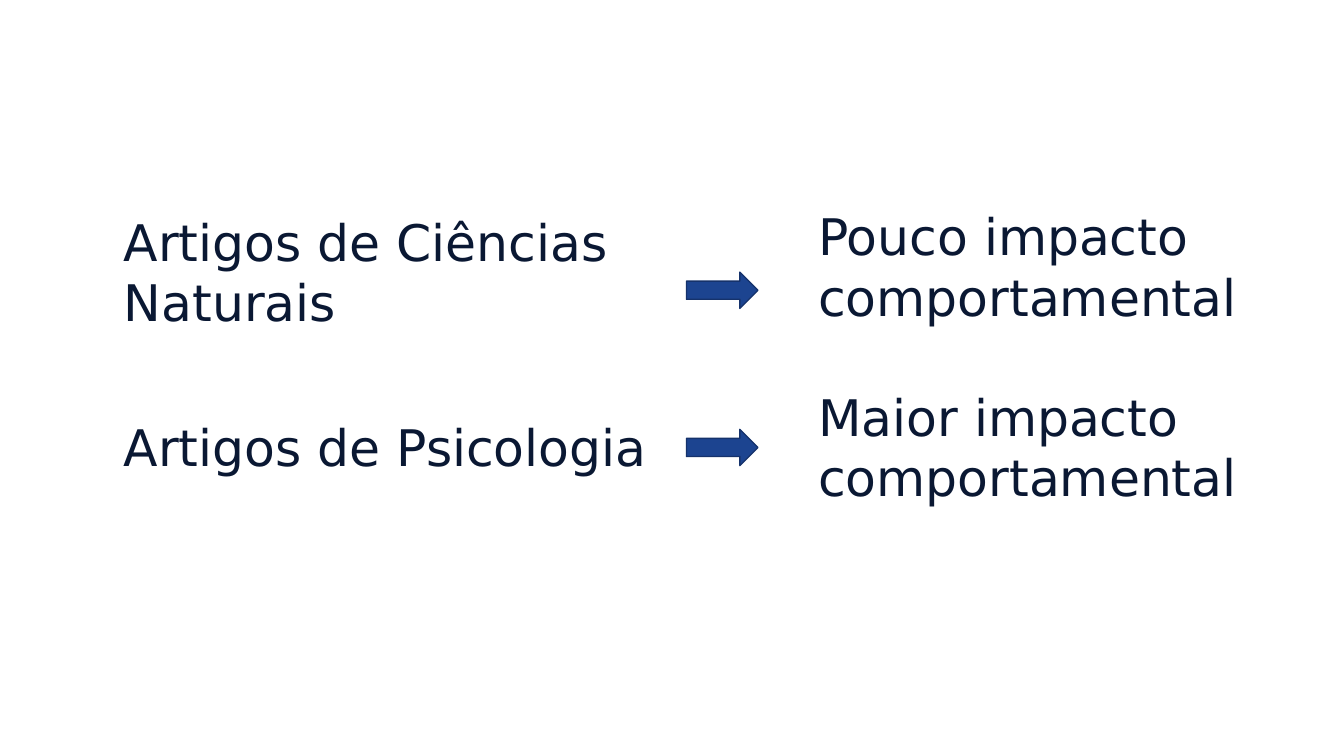
from dataclasses import dataclass

from pptx import Presentation
from pptx.dml.color import RGBColor
from pptx.enum.shapes import MSO_SHAPE
from pptx.enum.text import MSO_AUTO_SIZE
from pptx.slide import Slide
from pptx.util import Inches, Length, Pt

ARROW = MSO_SHAPE.RIGHT_ARROW
GROW = MSO_AUTO_SIZE.SHAPE_TO_FIT_TEXT


@dataclass(frozen=True)
class Theme:
    font: str = "DejaVu Sans"
    size: Length = Pt(36)
    edge: Length = Pt(1)
    ink: RGBColor = RGBColor(0x0A, 0x18, 0x33)
    fill: RGBColor = RGBColor(0x1C, 0x44, 0x90)
    line: RGBColor = RGBColor(0x15, 0x32, 0x6B)


@dataclass(frozen=True)
class Span:
    col: float
    wide: float


@dataclass(frozen=True)
class Label:
    text: str
    row: float
    tall: float


@dataclass(frozen=True)
class Link:
    cause: Label
    effect: Label
    row: float


THEME = Theme()
WIDE, HIGH = 133.33, 75
CAUSE = Span(11.3, 58.9)
MIDDLE = Span(68.1, 7.1)
EFFECT = Span(80.2, 45.4)
ONE, TWO = 7.1, 13.1
TALL = 3.6

LINKS = (
    Link(
        Label("Artigos de Ciências Naturais", 20.4, TWO),
        Label("Pouco impacto comportamental", 19.9, TWO),
        27,
    ),
    Link(
        Label("Artigos de Psicologia", 40.8, ONE),
        Label("Maior impacto comportamental", 37.8, TWO),
        42.6,
    ),
)


def grid(cells: float) -> Length:
    return Inches(cells / 10)


def area(span: Span, row: float, tall: float) -> tuple[Length, ...]:
    return grid(span.col), grid(row), grid(span.wide), grid(tall)


def write(slide: Slide, span: Span, label: Label) -> None:
    box = slide.shapes.add_textbox(*area(span, label.row, label.tall))
    frame = box.text_frame
    frame.word_wrap = True
    frame.auto_size = GROW
    run = frame.paragraphs[0].add_run()
    run.text = label.text
    run.font.name = THEME.font
    run.font.size = THEME.size
    run.font.color.rgb = THEME.ink


def point(slide: Slide, row: float) -> None:
    arrow = slide.shapes.add_shape(ARROW, *area(MIDDLE, row, TALL))
    arrow.shadow.inherit = False
    arrow.fill.solid()
    arrow.fill.fore_color.rgb = THEME.fill
    arrow.line.color.rgb = THEME.line
    arrow.line.width = THEME.edge


def main() -> None:
    deck = Presentation()
    deck.slide_width = grid(WIDE)
    deck.slide_height = grid(HIGH)
    slide = deck.slides.add_slide(deck.slide_layouts[6])
    for link in LINKS:
        write(slide, CAUSE, link.cause)
        point(slide, link.row)
        write(slide, EFFECT, link.effect)
    deck.save("out.pptx")


if __name__ == "__main__":
    main()
